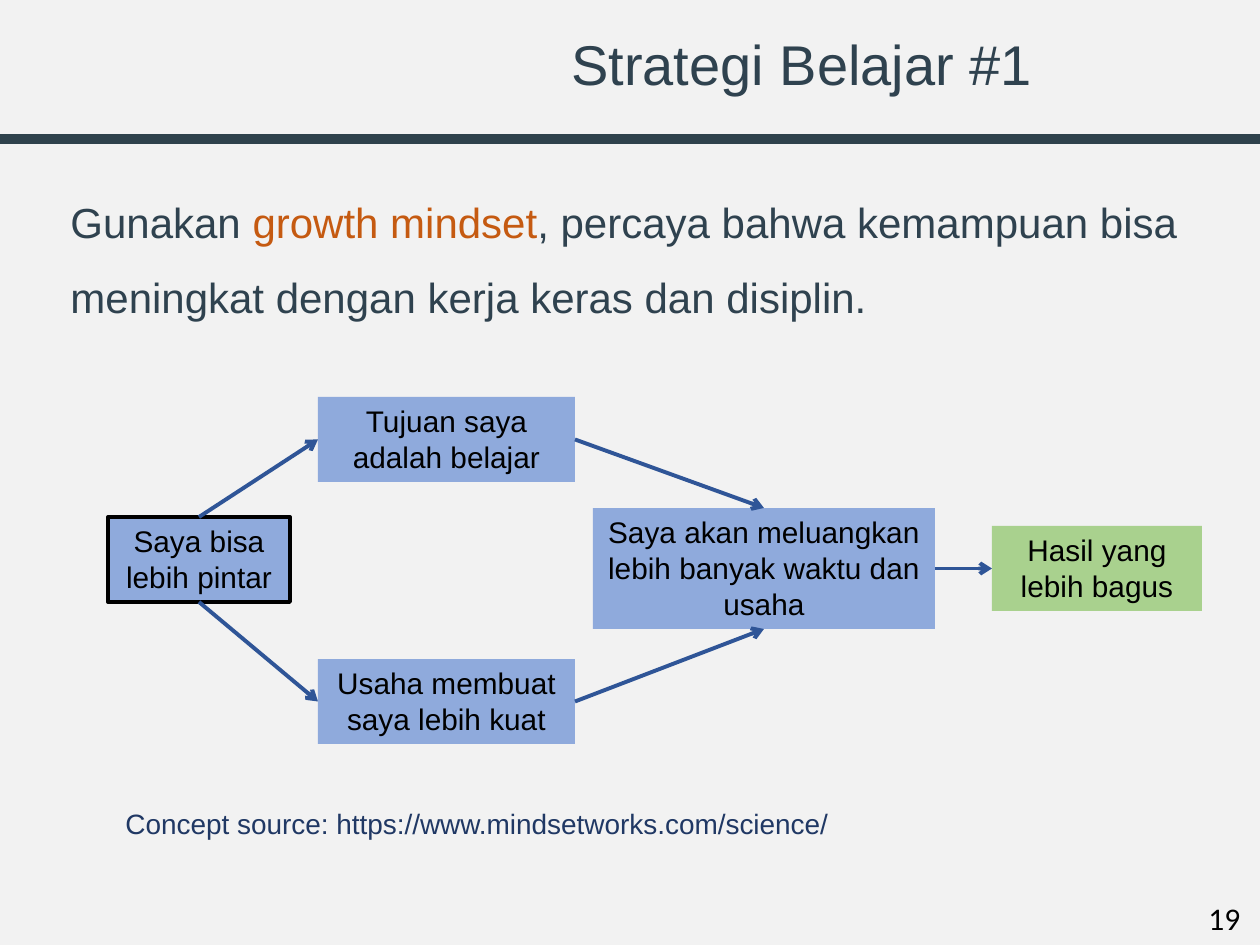
from dataclasses import dataclass

from lxml import etree
from pptx import Presentation
from pptx import util as u
from pptx.dml.color import RGBColor
from pptx.enum import shapes, text
from pptx.oxml.ns import qn

SCALE = 914400 / 126  # EMU per px
TOP, LEFT, BOTTOM, RIGHT = range(4)  # connection sites of a rectangle


@dataclass(frozen=True)
class Theme:
    back: str = "F2F2F2"
    ink: str = "2F424F"
    rule: str = "2F424C"
    navy: str = "203864"
    accent: str = "C55A11"
    black: str = "000000"
    step: str = "8FAADC"
    result: str = "A9D18E"
    arrow: str = "2F5597"
    sans: str = "Arial"
    number: str = "Calibri"
    title_size: int = 32
    body_size: int = 24
    number_size: int = 18
    box_size: int = 17
    source_size: int = 16


T = Theme()


def px(n):
    return u.Emu(round(n * SCALE))


def rgb(color):
    return RGBColor.from_string(color)


def apply(target, values):
    for name, value in values.items():
        setattr(target, name, value)


def write(tf, runs, size, font=T.sans, frame=None, para=None):
    """Fill a text frame with one paragraph of (wording, colour) runs."""
    apply(tf, frame or {})
    p = tf.paragraphs[0]
    apply(p, para or {})
    for wording, color in runs:
        r = p.add_run()
        r.text = wording
        apply(r.font, {"name": font, "size": u.Pt(size)})
        r.font.color.rgb = rgb(color)


def add_text(slide, at, runs, size, wrap=False, **options):
    sp = slide.shapes.add_textbox(*map(px, at))
    write(sp.text_frame, runs, size, frame={"word_wrap": wrap}, **options)


def add_box(slide, at, wording, fill=T.step, outline=None):
    sp = slide.shapes.add_shape(shapes.MSO_SHAPE.RECTANGLE, *map(px, at))
    sp.shadow.inherit = False
    sp.fill.solid()
    sp.fill.fore_color.rgb = rgb(fill)
    if outline:
        sp.line.color.rgb = rgb(outline)
        sp.line.width = u.Pt(2.25)
    else:
        sp.line.fill.background()
    write(sp.text_frame, [(wording, T.black)], T.box_size,
          frame={"word_wrap": True, "vertical_anchor": text.MSO_ANCHOR.TOP,
                 "auto_size": text.MSO_AUTO_SIZE.SHAPE_TO_FIT_TEXT},
          para={"alignment": text.PP_ALIGN.CENTER})
    return sp


def add_line(slide, color, width, ends=(0, 0, 0, 0)):
    line = slide.shapes.add_connector(shapes.MSO_CONNECTOR.STRAIGHT, *map(px, ends))
    line.line.color.rgb = rgb(color)
    line.line.width = u.Pt(width)
    etree.SubElement(line._element.spPr, qn("a:effectLst"))
    return line


def add_arrow(slide, start, start_side, end, end_side):
    line = add_line(slide, T.arrow, 2.25)
    line.begin_connect(start, start_side)
    line.end_connect(end, end_side)
    etree.SubElement(line.line._get_or_add_ln(), qn("a:tailEnd"), type="arrow")


def add_header(slide):
    # Rule
    add_line(slide, T.rule, 6, (0, 139, 1260, 139))
    # Title
    title = slide.shapes.title
    apply(title, dict(zip(("left", "top", "width", "height"),
                          map(px, (408, 29, 788, 76)))))
    write(title.text_frame, [("Strategi Belajar #1", T.ink)], T.title_size,
          frame={"vertical_anchor": text.MSO_ANCHOR.MIDDLE, "word_wrap": True},
          para={"alignment": text.PP_ALIGN.CENTER, "line_spacing": 0.9})


def add_flow(slide):
    # Steps
    belief = add_box(slide, (108, 517, 182, 85), "Saya bisa lebih pintar", outline=T.black)
    goal, effort = (
        add_box(slide, (318, top, 257, 85), wording)
        for top, wording in ((397, "Tujuan saya adalah belajar"),
                             (659, "Usaha membuat saya lebih kuat")))
    time = add_box(slide, (593, 508, 342, 121),
                   "Saya akan meluangkan lebih banyak waktu dan usaha")
    outcome = add_box(slide, (992, 526, 210, 85), "Hasil yang lebih bagus", T.result)
    # Arrows between the steps
    for link in ((belief, TOP, goal, LEFT), (belief, BOTTOM, effort, LEFT),
                 (goal, RIGHT, time, TOP), (effort, RIGHT, time, BOTTOM),
                 (time, RIGHT, outcome, LEFT)):
        add_arrow(slide, *link)


def main():
    prs = Presentation()
    apply(prs, {"slide_width": px(1260), "slide_height": px(945)})
    slide = prs.slides.add_slide(prs.slide_layouts.get_by_name("Title Only"))
    slide.background.fill.solid()
    slide.background.fill.fore_color.rgb = rgb(T.back)

    add_header(slide)
    # Main message
    add_text(slide, (58, 165, 1138, 188),
             [("Gunakan ", T.ink), ("growth mindset", T.accent),
              (", percaya bahwa kemampuan bisa meningkat dengan kerja keras dan disiplin.",
               T.ink)],
             T.body_size, wrap=True, para={"line_spacing": 1.5})
    add_flow(slide)
    # Source and page number
    add_text(slide, (113, 800, 737, 47),
             [("Concept source: https://www.mindsetworks.com/science/", T.navy)],
             T.source_size)
    add_text(slide, (1196, 893, 63, 50), [("19", T.black)], T.number_size, font=T.number)
    prs.save("out.pptx")


if __name__ == "__main__":
    main()
